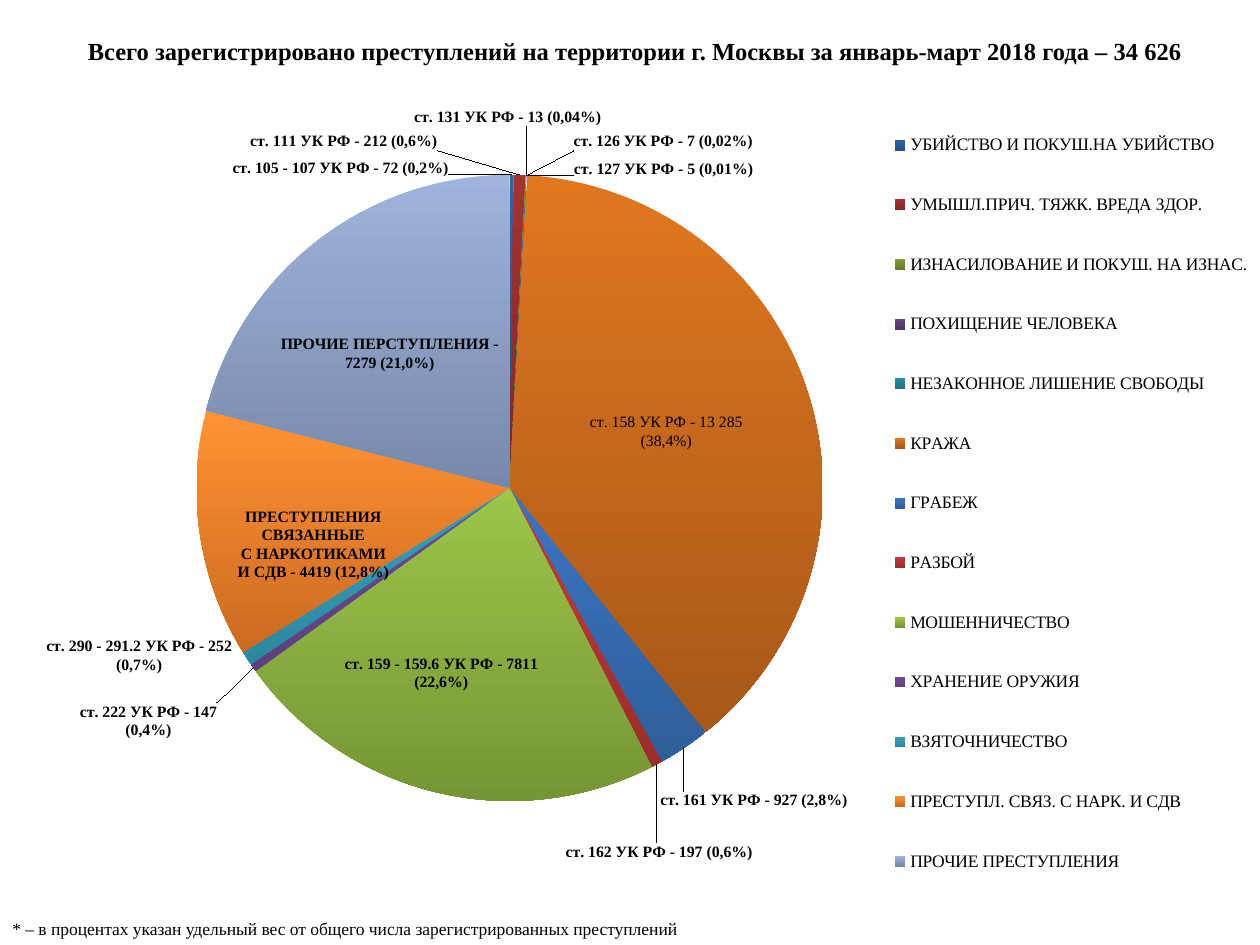
from lxml import etree
from pptx import Presentation
from pptx.chart.data import CategoryChartData
from pptx.dml.color import RGBColor
from pptx.enum.chart import XL_CHART_TYPE, XL_LABEL_POSITION, XL_LEGEND_POSITION
from pptx.enum.text import MSO_ANCHOR, PP_ALIGN
from pptx.oxml.ns import qn
from pptx.util import Pt

PIE = XL_CHART_TYPE.PIE
OUTSIDE, CENTER = XL_LABEL_POSITION.OUTSIDE_END, XL_LABEL_POSITION.CENTER
RIGHT = XL_LEGEND_POSITION.RIGHT
MIDDLE, ALIGN_CENTER = MSO_ANCHOR.MIDDLE, PP_ALIGN.CENTER

FONT = "Times New Roman"
COLORS = {
    "text": "000000",
    "murder": ("2F62A5", "26508A"),
    "injury": ("A63231", "822625"),
    "rape": ("7E9E38", "627B2A"),
    "kidnapping": ("64478A", "4B3568"),
    "confinement": ("2C8CA5", "206E82"),
    "theft": ("E0771F", "A85818"),
    "robbery": ("3A75C4", "2E5F99"),
    "assault": ("C8393B", "9B2D2A"),
    "fraud": ("9BC648", "769535"),
    "weapons": ("6C4A97", "5D417E"),
    "bribery": ("32A2BD", "2C88A0"),
    "drugs": ("FF9335", "CC6A1F"),
    "other": ("9FB4DC", "7789AB"),
}

# Colour key, legend entry, count, label lines, label position, label shift in points
CRIMES = [
    ("murder", "УБИЙСТВО И ПОКУШ.НА УБИЙСТВО", 72,
     ["ст. 105 - 107 УК РФ - 72 (0,2%)"], OUTSIDE, (-98, 6)),
    ("injury", "УМЫШЛ.ПРИЧ. ТЯЖК. ВРЕДА ЗДОР.", 212,
     ["ст. 111 УК РФ - 212 (0,6%)"], OUTSIDE, (-101, -10)),
    ("rape", "ИЗНАСИЛОВАНИЕ И ПОКУШ. НА ИЗНАС.", 13,
     ["ст. 131 УК РФ - 13 (0,04%)"], OUTSIDE, (-11, -24)),
    ("kidnapping", "ПОХИЩЕНИЕ ЧЕЛОВЕКА", 7,
     ["ст. 126 УК РФ - 7 (0,02%)"], OUTSIDE, (78, -10)),
    ("confinement", "НЕЗАКОННОЕ ЛИШЕНИЕ СВОБОДЫ", 5,
     ["ст. 127 УК РФ - 5 (0,01%)"], OUTSIDE, (78, 6)),
    ("theft", "КРАЖА", 13285,
     ["ст. 158 УК РФ - 13 285", "(38,4%)"], CENTER, (4, -5)),
    ("robbery", "ГРАБЕЖ", 927,
     ["ст. 161 УК РФ - 927 (2,8%)"], OUTSIDE, (-16, 21)),
    ("assault", "РАЗБОЙ", 197,
     ["ст. 162 УК РФ - 197 (0,6%)"], OUTSIDE, (-54, 41)),
    ("fraud", "МОШЕННИЧЕСТВО", 7811,
     ["ст. 159 - 159.6 УК РФ - 7811", "(22,6%)"], CENTER, (-18, 19)),
    ("weapons", "ХРАНЕНИЕ ОРУЖИЯ", 147,
     ["ст. 222 УК РФ - 147", "(0,4%)"], OUTSIDE, (-17, 18)),
    ("bribery", "ВЗЯТОЧНИЧЕСТВО", 252,
     ["ст. 290 - 291.2 УК РФ - 252", "(0,7%)"], OUTSIDE, (-5, -14)),
    ("drugs", "ПРЕСТУПЛ. СВЯЗ. С НАРК. И СДВ", 4419,
     ["ПРЕСТУПЛЕНИЯ", "СВЯЗАННЫЕ", "С НАРКОТИКАМИ", "И СДВ - 4419 (12,8%)"],
     CENTER, (-24, 19)),
    ("other", "ПРОЧИЕ ПРЕСТУПЛЕНИЯ", 7279,
     ["ПРОЧИЕ ПЕРСТУПЛЕНИЯ -", "7279 (21,0%)"], CENTER, (-14, -6)),
]
CHART_WIDTH, CHART_HEIGHT = 720, 542


def style(font, size, bold=False):
    font.name, font.size, font.bold = FONT, Pt(size), bold
    font.color.rgb = RGBColor.from_string(COLORS["text"])


def add_layout(previous, **settings):
    """Put a manual layout right after the given chart element."""
    for old in previous.getparent().findall(qn("c:layout")):
        old.getparent().remove(old)
    layout = etree.Element(qn("c:layout"))
    manual = etree.SubElement(layout, qn("c:manualLayout"))
    for tag, value in settings.items():
        etree.SubElement(manual, qn(f"c:{tag}"), val=str(value))
    previous.addnext(layout)


prs = Presentation()
prs.slide_width, prs.slide_height = Pt(720), Pt(540)
slide = prs.slides.add_slide(prs.slide_layouts[5])

# Title
title = slide.shapes.title
title.left, title.top, title.width, title.height = Pt(20), Pt(16.5), Pt(686), Pt(24.5)
title.text_frame.vertical_anchor = MIDDLE
heading = title.text_frame.paragraphs[0]
heading.alignment = ALIGN_CENTER
heading_run = heading.add_run()
heading_run.text = ("Всего зарегистрировано преступлений на территории г. Москвы "
                    "за январь-март 2018 года – 34 626")
style(heading_run.font, 14, True)

# Pie chart
crime_data = CategoryChartData()
crime_data.categories = [crime[1] for crime in CRIMES]
crime_data.add_series("Преступления", [crime[2] for crime in CRIMES])
chart = slide.shapes.add_chart(PIE, 0, Pt(16.5), Pt(CHART_WIDTH), Pt(CHART_HEIGHT),
                               crime_data).chart
chart.has_title = False
style(chart.font, 10)
chart.has_legend = True
chart.legend.position = RIGHT
chart.legend.include_in_layout = False
style(chart.legend.font, 10)
plot = chart.plots[0]
plot.vary_by_categories = True
pie = plot.series[0]
labels = pie.data_labels
labels.show_value = True
style(labels.font, 9, True)

# Slices and their labels
for index, (key, _, _, lines, position, _) in enumerate(CRIMES):
    point = pie.points[index]
    point.format.line.fill.background()
    fill = point.format.fill
    fill.gradient()
    fill.gradient_angle = 270
    for stop, color in zip(fill.gradient_stops, COLORS[key]):
        stop.color.rgb = RGBColor.from_string(color)
    label = point.data_label
    frame = label.text_frame
    for number, line in enumerate(lines):
        paragraph = frame.add_paragraph() if number else frame.paragraphs[0]
        run = paragraph.add_run()
        run.text = line
        style(run.font, 9, key != "theft")
    label.position = position

# Label shifts, leader lines, plot and legend areas
chart_xml = chart.element
for label_xml, crime in zip(chart_xml.iter(qn("c:dLbl")), CRIMES):
    shift_x, shift_y = crime[5]
    add_layout(label_xml.find(qn("c:idx")),
               x=round(shift_x / CHART_WIDTH, 3), y=round(shift_y / CHART_HEIGHT, 3))
labels_xml = next(chart_xml.iter(qn("c:dLbls")))
for old_leader in labels_xml.findall(qn("c:showLeaderLines")):
    labels_xml.remove(old_leader)
etree.SubElement(labels_xml, qn("c:showLeaderLines"), val="1")

plot_area = next(chart_xml.iter(qn("c:plotArea")))
for old_layout in plot_area.findall(qn("c:layout")):
    plot_area.remove(old_layout)
add_layout(plot_area[0], layoutTarget="inner", xMode="edge", yMode="edge",
           x=0.156, y=0.096, w=0.497, h=0.776)
plot_area.insert(0, plot_area.find(qn("c:layout")))
add_layout(next(chart_xml.iter(qn("c:legendPos"))), xMode="edge", yMode="edge",
           x=0.7, y=0.07, w=0.3, h=0.86)

# Footnote
footnote = slide.shapes.add_textbox(0, Pt(521), Pt(670), Pt(19)).text_frame
footnote.word_wrap = True
footnote_run = footnote.paragraphs[0].add_run()
footnote_run.text = ("* – в процентах указан удельный вес от общего числа "
                     "зарегистрированных преступлений")
style(footnote_run.font, 10)

prs.save("out.pptx")
